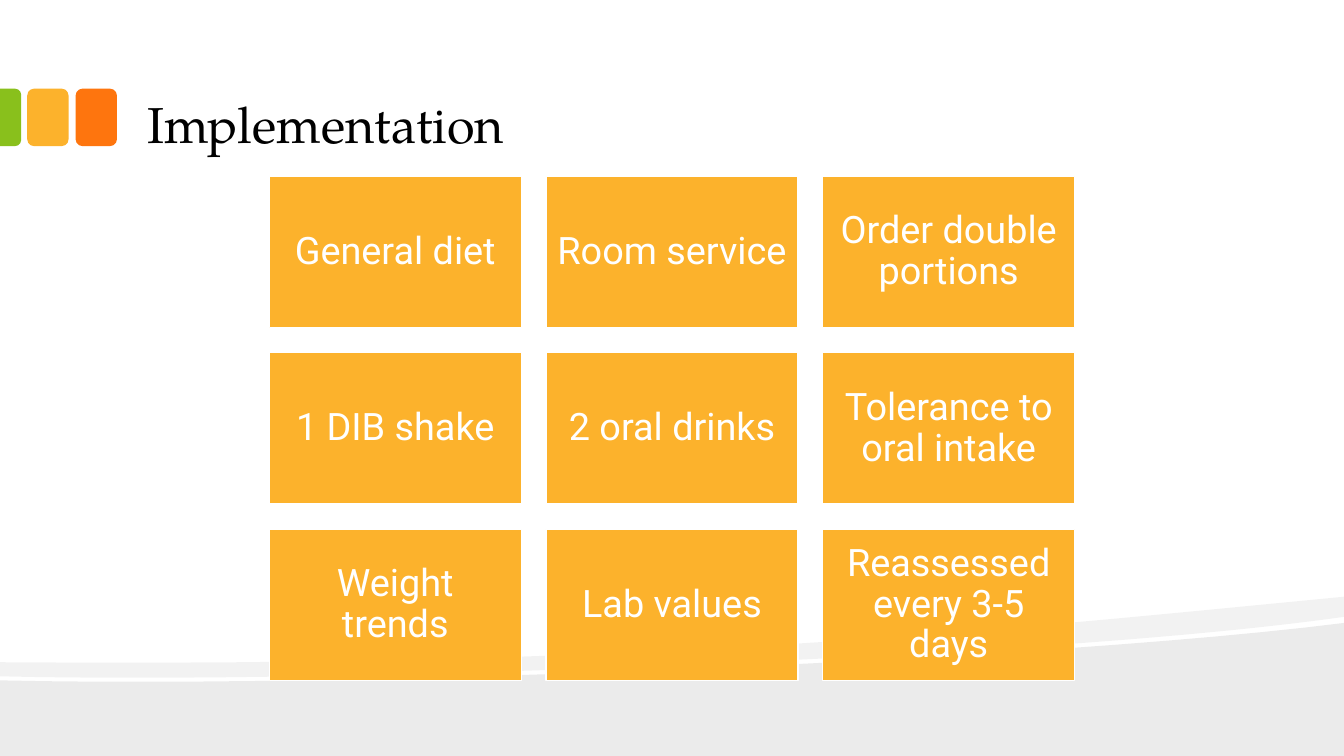
from lxml.etree import SubElement
from pptx import Presentation
from pptx.dml.color import RGBColor
from pptx.enum.shapes import MSO_SHAPE as Shape
from pptx.enum.text import MSO_ANCHOR as Anchor, MSO_AUTO_SIZE as AutoSize, PP_ALIGN as Align
from pptx.oxml.ns import qn
from pptx.util import Inches, Pt

BLACK = RGBColor(0x00, 0x00, 0x00)
WHITE = RGBColor(0xFF, 0xFF, 0xFF)
ORANGE = RGBColor(0xFE, 0x75, 0x0E)
AMBER = RGBColor(0xFC, 0xB2, 0x2C)
GREEN = RGBColor(0x89, 0xC0, 0x1C)

STEPS = [
    ["General diet", "Room service", "Order double portions"],
    ["1 DIB shake", "2 oral drinks", "Tolerance to oral intake"],
    ["Weight trends", "Lab values", "Reassessed every 3-5 days"],
]


def curve(start, *segments, steps=24):
    """Return points along joined cubic Bézier segments (control, control, end)."""
    points = [start]
    for c1, c2, end in segments:
        first = points[-1]
        for step in range(1, steps + 1):
            t = step / steps
            weights = ((1 - t) ** 3, 3 * t * (1 - t) ** 2, 3 * t * t * (1 - t), t ** 3)
            points.append(tuple(
                sum(w * p[axis] for w, p in zip(weights, (first, c1, c2, end)))
                for axis in (0, 1)))
    return points


class SlideBuilder:
    title_font = "TeX Gyre Pagella"
    body_font = "Roboto"

    def __init__(self, page):
        self.page = page

    def set_text(self, shape, text, font, size, color, align, anchor, insets):
        frame = shape.text_frame
        frame.text = text
        frame.word_wrap = True
        frame.auto_size = AutoSize.NONE
        frame.vertical_anchor = anchor
        frame.margin_left = frame.margin_right = Inches(insets[0])
        frame.margin_top = frame.margin_bottom = Inches(insets[1])
        para = frame.paragraphs[0]
        para.alignment = align
        span = para.runs[0]
        span.font.name = font
        span.font.size = Pt(size)
        span.font.color.rgb = color
        return para

    def title(self, text, left, top, width, height):
        box = self.page.shapes.title
        box.left, box.top = Inches(left), Inches(top)
        box.width, box.height = Inches(width), Inches(height)
        self.set_text(box, text, self.title_font, 36, BLACK,
                      Align.LEFT, Anchor.BOTTOM, (0.13, 0.07))

    def block(self, kind, left, top, width, height, color):
        box = self.page.shapes.add_shape(
            kind, Inches(left), Inches(top), Inches(width), Inches(height))
        box.shadow.inherit = False
        box.fill.solid()
        box.fill.fore_color.rgb = color
        box.line.fill.background()
        return box

    def tile(self, text, left, top, width, height):
        box = self.block(Shape.RECTANGLE, left, top, width, height, AMBER)
        box.line.color.rgb = WHITE
        box.line.width = Pt(0.85)
        para = self.set_text(box, text, self.body_font, 27, WHITE,
                             Align.CENTER, Anchor.MIDDLE, (0.11, 0.11))
        para.line_spacing = 0.9

    def wave(self, points, opacity):
        """Draw a black outline shape filled at the given opacity percent."""
        start, *rest = [(Inches(x), Inches(y)) for x, y in points]
        builder = self.page.shapes.build_freeform(*start)
        builder.add_line_segments(rest, close=True)
        shape = builder.convert_to_shape()
        shape.shadow.inherit = False
        shape.fill.solid()
        shape.fill.fore_color.rgb = BLACK
        shape.line.fill.background()
        color = shape.fill._xPr.find(qn("a:solidFill"))[0]
        SubElement(color, qn("a:alpha"), val=str(opacity * 1000))


def main():
    deck = Presentation()
    deck.slide_width, deck.slide_height = Inches(13.33), Inches(7.5)
    page = deck.slides.add_slide(deck.slide_layouts[5])
    builder = SlideBuilder(page)

    lower_edge = curve((0, 6.75), ((3.52, 6.83), (10.42, 6.55), (13.33, 6.18)))
    builder.wave(lower_edge + [(13.33, 7.5), (0, 7.5)], 8)
    band_bottom = curve((13.33, 6.12),
                        ((12.55, 6.23), (11.49, 6.33), (10.29, 6.41)),
                        ((6.98, 6.63), (2.58, 6.77), (0, 6.71)))
    band_top = curve((0, 6.57), ((6.52, 6.62), (9.71, 6.27), (13.33, 5.92)))
    builder.wave(band_bottom + band_top, 5)

    for left, color in ((0.75, ORANGE), (0.27, AMBER)):
        builder.block(Shape.ROUNDED_RECTANGLE, left, 0.88, 0.41, 0.57, color)
    tab = builder.block(Shape.ROUND_2_SAME_RECTANGLE, -0.18, 1.06, 0.57, 0.21, GREEN)
    tab.rotation = 90
    tab.adjustments[0] = 0.292

    builder.title("Implementation", 1.33, 0.17, 10.66, 1.42)

    for row, labels in enumerate(STEPS):
        for column, label in enumerate(labels):
            builder.tile(label, 2.67 + 2.745 * column, 1.75 + 1.75 * row, 2.5, 1.5)

    deck.save("out.pptx")


if __name__ == "__main__":
    main()
